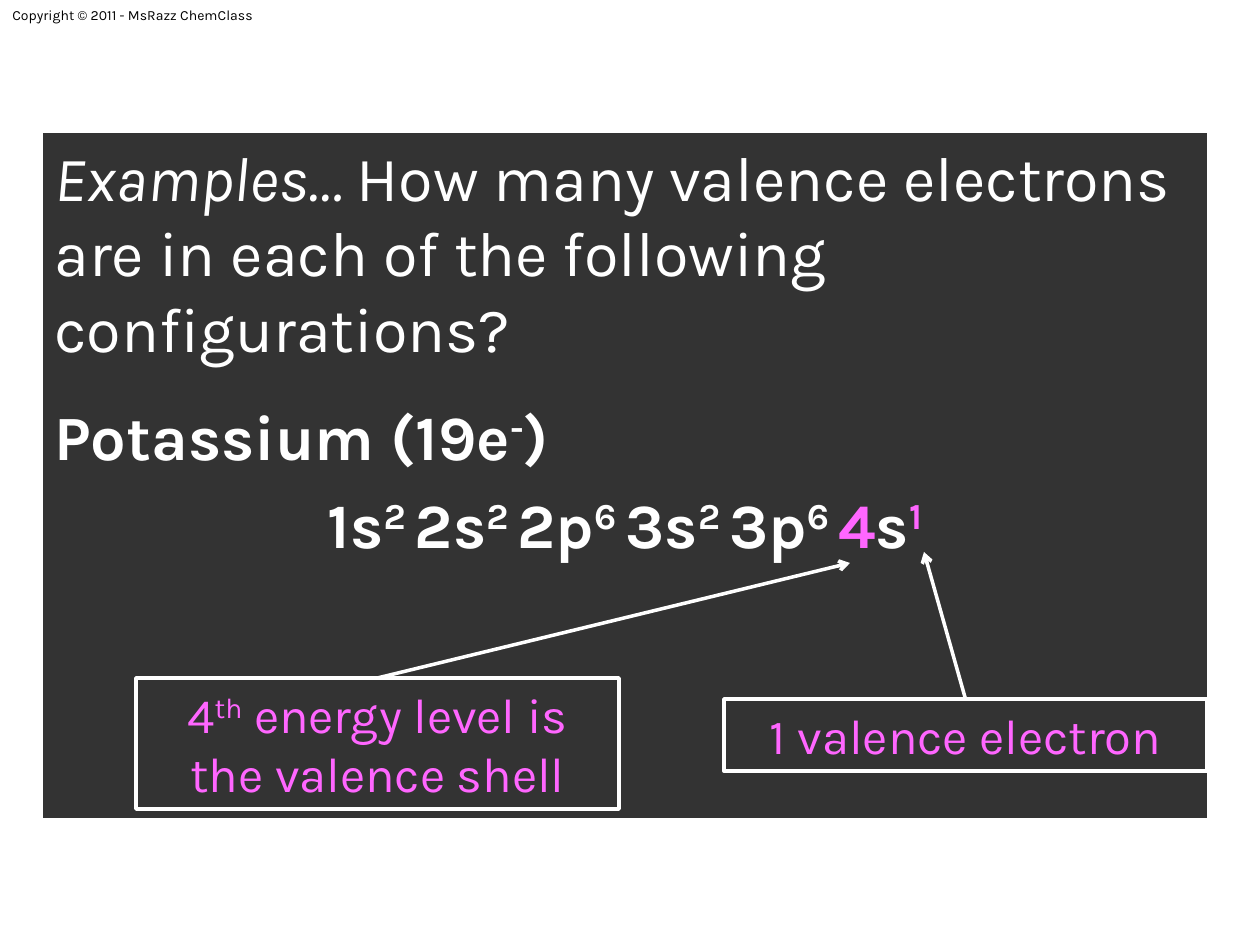
from dataclasses import dataclass
from typing import Optional

from lxml import etree
from pptx import Presentation
from pptx import util as u
from pptx.dml.color import RGBColor
from pptx.enum import shapes, text
from pptx.oxml.ns import qn

EMU_PER_PX = 914400 / 126
FONT = "Karla"
BLACK = RGBColor(0x00, 0x00, 0x00)
WHITE = RGBColor(0xFF, 0xFF, 0xFF)
PINK = RGBColor(0xFF, 0x66, 0xFF)
HANGING = 48


@dataclass(frozen=True)
class Run:
    words: str
    color: RGBColor = WHITE
    bold: bool = False
    italic: bool = False
    raised: bool = False


@dataclass(frozen=True)
class Line:
    runs: tuple[Run, ...]
    size: int
    align: text.PP_ALIGN = text.PP_ALIGN.LEFT
    before: float = 0
    hanging: int = 0


@dataclass(frozen=True)
class Box:
    left: int
    top: int
    width: int
    height: int
    lines: tuple[Line, ...]
    border: Optional[float] = None
    opacity: Optional[int] = None  # percent of black fill
    grows: bool = True


@dataclass(frozen=True)
class Callout:
    box: Box
    tip: tuple[int, int]


def px(length: float) -> int:
    return u.Emu(round(length * EMU_PER_PX))


def add_line(paragraph, line: Line) -> None:
    if line.hanging:
        properties = paragraph._p.get_or_add_pPr()
        properties.set("marL", str(px(line.hanging)))
        properties.set("indent", str(-px(line.hanging)))
    formats = {"alignment": line.align, "space_before": u.Pt(line.before)}
    for name, value in formats.items():
        setattr(paragraph, name, value)
    for item in line.runs:
        run = paragraph.add_run()
        run.text = item.words
        formats = {"name": FONT, "size": u.Pt(line.size),
                   "bold": item.bold, "italic": item.italic}
        for name, value in formats.items():
            setattr(run.font, name, value)
        run.font.color.rgb = item.color
        if item.raised:
            run._r.get_or_add_rPr().set("baseline", "30000")


def add_box(slide, box: Box):
    place = [px(n) for n in (box.left, box.top, box.width, box.height)]
    shape = slide.shapes.add_shape(shapes.MSO_SHAPE.RECTANGLE, *place)
    shape.shadow.inherit = False
    if box.opacity is None:
        shape.fill.background()
    else:
        shape.fill.solid()
        shape.fill.fore_color.rgb = BLACK
        color = shape.fill._xPr.find(qn("a:solidFill"))[0]
        etree.SubElement(color, qn("a:alpha")).set("val", str(box.opacity * 1000))
    if box.border is None:
        shape.line.fill.background()
    else:
        shape.line.color.rgb = WHITE
        shape.line.width = u.Pt(box.border)
    frame = shape.text_frame
    fit = text.MSO_AUTO_SIZE
    formats = {"word_wrap": True, "vertical_anchor": text.MSO_ANCHOR.TOP,
               "auto_size": fit.SHAPE_TO_FIT_TEXT if box.grows else fit.NONE}
    for name, value in formats.items():
        setattr(frame, name, value)
    for index, line in enumerate(box.lines):
        add_line(frame.add_paragraph() if index else frame.paragraphs[0], line)
    return shape


def add_callout(slide, callout: Callout) -> None:
    box = callout.box
    shape = add_box(slide, box)
    start = px(box.left + box.width / 2), px(box.top)
    arrow = slide.shapes.add_connector(
        shapes.MSO_CONNECTOR.STRAIGHT, *start, *map(px, callout.tip))
    arrow.begin_connect(shape, 0)
    arrow.line.color.rgb = WHITE
    arrow.line.width = u.Pt(2)
    etree.SubElement(arrow.line._get_or_add_ln(), qn("a:tailEnd")).set("type", "arrow")
    etree.SubElement(arrow._element.spPr, qn("a:effectLst"))


def configuration() -> tuple[Run, ...]:
    """Electron configuration of potassium, with its valence shell in pink."""
    runs = []
    for orbital, count in (("1s", 2), ("2s", 2), ("2p", 6), ("3s", 2), ("3p", 6)):
        runs += [Run(orbital, bold=True), Run(f"{count} ", bold=True, raised=True)]
    return (*runs, Run("4", PINK, bold=True), Run("s", bold=True),
            Run("1", PINK, bold=True, raised=True))


CENTER = text.PP_ALIGN.CENTER

COPYRIGHT = Box(0, 0, 299, 30, (
    Line((Run("Copyright © 2011 - MsRazz ChemClass", BLACK),), 8),))

QUESTION = Box(42, 132, 1166, 687, (
    Line((Run("Examples… ", italic=True),
          Run("How many valence electrons are in each of the following "
              "configurations?")), 36),
    Line((Run("Potassium (19e", bold=True), Run("-", bold=True, raised=True),
          Run(")", bold=True)), 36, before=18.5, hanging=HANGING),
    Line(configuration(), 36, CENTER, before=7.2, hanging=HANGING),
), border=0.75, opacity=80, grows=False)

CALLOUTS = (
    Callout(Box(136, 678, 483, 131, (
        Line((Run("4", PINK), Run("th", PINK, raised=True),
              Run(" energy level is the valence shell", PINK)), 28, CENTER),
    ), border=2), tip=(850, 563)),
    Callout(Box(724, 699, 483, 72, (
        Line((Run("1 valence electron", PINK),), 28, CENTER),
    ), border=2), tip=(924, 552)),
)


def main() -> None:
    presentation = Presentation()
    presentation.slide_width, presentation.slide_height = px(1260), px(945)
    slide = presentation.slides.add_slide(presentation.slide_layouts[6])

    # Copyright line and question panel
    add_box(slide, COPYRIGHT)
    add_box(slide, QUESTION)

    # Boxes with arrows to the valence shell and its electron
    for callout in CALLOUTS:
        add_callout(slide, callout)

    presentation.save("out.pptx")


if __name__ == "__main__":
    main()
